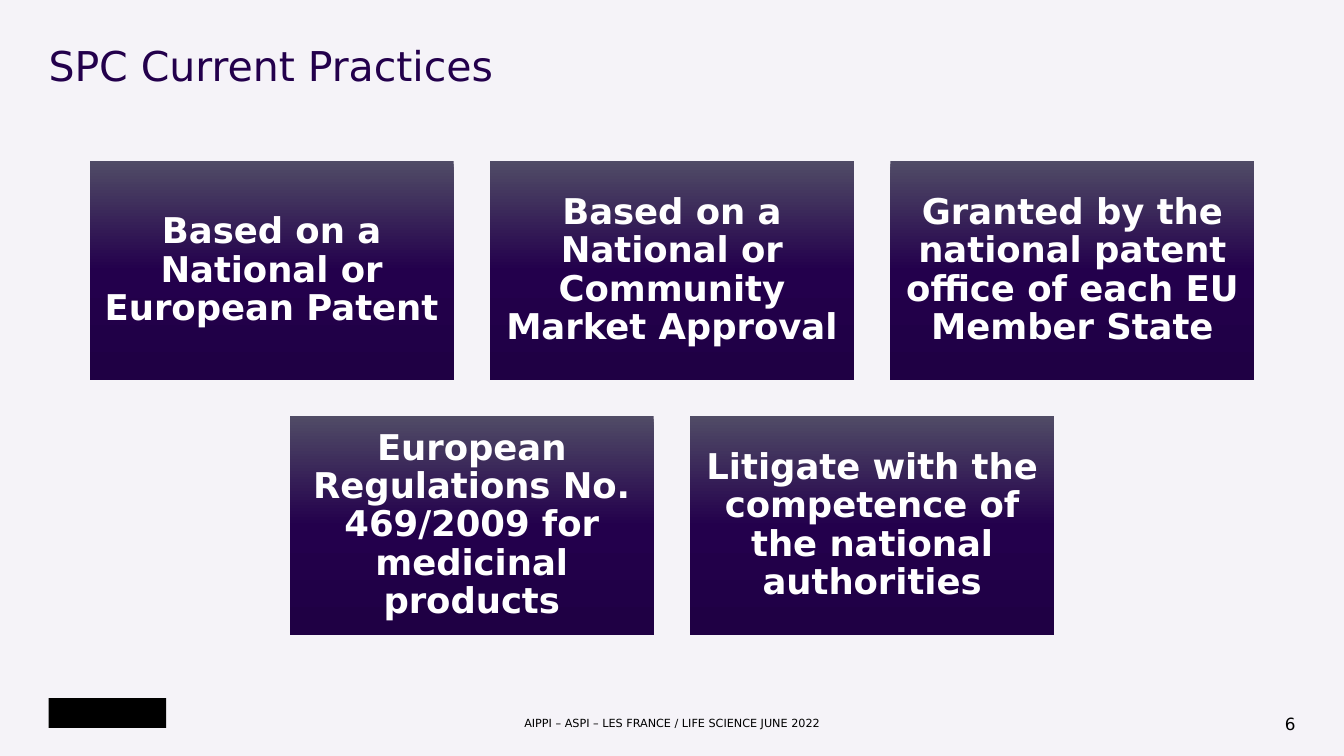
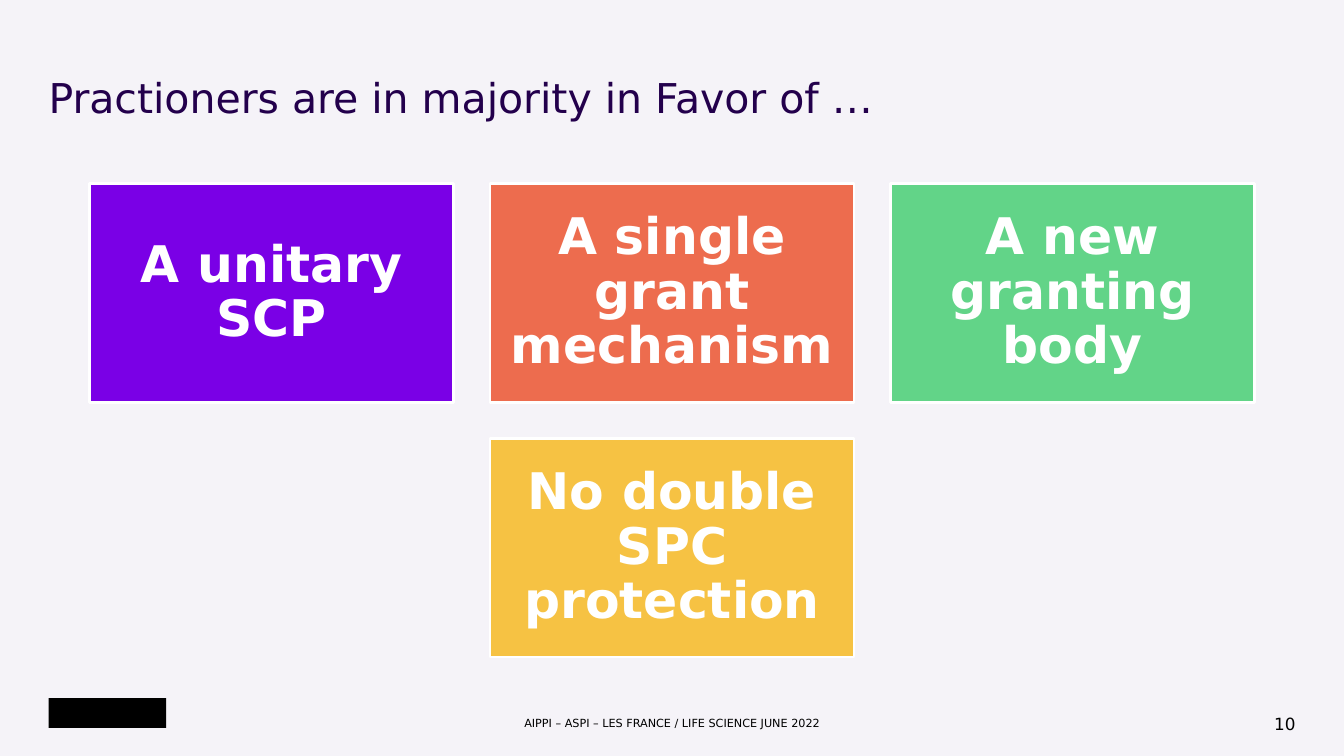
from copy import deepcopy

from pptx import Presentation
from pptx.dml.color import RGBColor
from pptx.enum.shapes import MSO_SHAPE
from pptx.enum.text import MSO_ANCHOR, MSO_AUTO_SIZE, PP_ALIGN
from pptx.util import Pt

RECT = MSO_SHAPE.RECTANGLE
TOP, MIDDLE = MSO_ANCHOR.TOP, MSO_ANCHOR.MIDDLE
LEFT, CENTER, RIGHT = PP_ALIGN.LEFT, PP_ALIGN.CENTER, PP_ALIGN.RIGHT
NO_AUTOFIT = MSO_AUTO_SIZE.NONE

PALE = RGBColor(0xF5, 0xF3, 0xF8)
BLACK = RGBColor(0x00, 0x00, 0x00)
WHITE = RGBColor(0xFF, 0xFF, 0xFF)
SLATE = RGBColor(0x50, 0x4B, 0x66)
INDIGO = RGBColor(0x23, 0x00, 0x4C)
NIGHT = RGBColor(0x1F, 0x00, 0x44)
VIOLET = RGBColor(0x7A, 0x00, 0xE6)
CORAL = RGBColor(0xED, 0x6C, 0x4E)
GREEN = RGBColor(0x62, 0xD4, 0x88)
YELLOW = RGBColor(0xF6, 0xC2, 0x43)

FONT = "DejaVu Sans"
FOOTER = "AIPPI – ASPI – LES FRANCE / LIFE SCIENCE JUNE 2022"
GRADIENT = [(0, SLATE), (0.5, INDIGO), (1, NIGHT)]

SLIDES = [
    {
        "title": "SPC Current Practices", "title_top": 24.5, "number": "6",
        "tiles_top": 86.5, "size": 19,
        "tiles": [
            ("Based on a National or European Patent", GRADIENT),
            ("Based on a National or Community Market Approval", GRADIENT),
            ("Granted by the national patent office of each EU Member State", GRADIENT),
            ("European Regulations No. 469/2009 for medicinal products", GRADIENT),
            ("Litigate with the competence of the national authorities", GRADIENT),
        ],
    },
    {
        "title": "Practioners are in majority in Favor of …", "title_top": 42, "number": "10",
        "tiles_top": 98.5, "size": 27,
        "tiles": [
            ("A unitary SCP", VIOLET),
            ("A single grant mechanism", CORAL),
            ("A new granting body", GREEN),
            ("No double SPC protection", YELLOW),
        ],
    },
]

SLIDE_W, SLIDE_H = 720, 405
MARGIN = 26
TILE_W, TILE_H, GAP = 195, 117, 19.5
COLUMNS = 3

TITLE_STYLE = {"size": Pt(22), "color": INDIGO}
FOOTER_STYLE = {"size": Pt(6), "color": BLACK}
NUMBER_STYLE = {"size": Pt(9), "color": BLACK}


def place(sp, *box):
    for name, value in zip(("left", "top", "width", "height"), box):
        setattr(sp, name, Pt(value))


def write(sp, text, style, align, anchor, inset=0, line_spacing=1.0):
    tf = sp.text_frame
    tf.text = text
    frame = {"word_wrap": True, "auto_size": NO_AUTOFIT, "vertical_anchor": anchor}
    for side in ("left", "top", "right", "bottom"):
        frame[f"margin_{side}"] = Pt(inset)
    for name, value in frame.items():
        setattr(tf, name, value)
    p = tf.paragraphs[0]
    p.alignment, p.line_spacing = align, line_spacing
    font = p.runs[0].font
    font.name = FONT
    for name, value in style.items():
        if name == "color":
            font.color.rgb = value
        else:
            setattr(font, name, value)


def add_label(s, box, text, style, align):
    sp = s.shapes.add_textbox(*map(Pt, box))
    write(sp, text, style, align, MIDDLE)


def add_rect(s, box, color):
    sp = s.shapes.add_shape(RECT, *map(Pt, box))
    sp.shadow.inherit = False
    if isinstance(color, list):
        fill_gradient(sp, color)
    else:
        sp.fill.solid()
        sp.fill.fore_color.rgb = color
    sp.line.fill.background()
    return sp


def fill_gradient(sp, stops):
    sp.fill.gradient()
    sp.fill.gradient_angle = 270
    stop_list = sp.fill._fill._gradFill.gsLst
    for _ in stops[2:]:
        stop_list.append(deepcopy(stop_list[0]))
    for stop, (position, color) in zip(sp.fill.gradient_stops, stops):
        stop.position = position
        stop.color.rgb = color


def add_tiles(s, tiles, top, size):
    style = {"size": Pt(size), "bold": True, "color": WHITE}
    for start in range(0, len(tiles), COLUMNS):
        row = tiles[start:start + COLUMNS]
        left = (SLIDE_W - len(row) * (TILE_W + GAP) + GAP) / 2
        for i, (text, color) in enumerate(row):
            sp = add_rect(s, (left + i * (TILE_W + GAP), top, TILE_W, TILE_H), color)
            if color is not GRADIENT:
                sp.line.color.rgb = WHITE
                sp.line.width = Pt(1.5)
            write(sp, text, style, CENTER, MIDDLE, size * 0.3, 0.9)
        top += TILE_H + GAP


def add_slide(prs, content):
    s = prs.slides.add_slide(prs.slide_layouts[5])
    add_rect(s, (MARGIN, 374, 63, 16), BLACK)
    add_label(s, (169, 382.5, 382, 10), FOOTER, FOOTER_STYLE, CENTER)
    add_label(s, (656.5, 379.5, 37.5, 16.5), content["number"], NUMBER_STYLE, RIGHT)
    title = s.shapes.title
    place(title, MARGIN, content["title_top"], SLIDE_W - 2 * MARGIN, 44)
    write(title, content["title"], TITLE_STYLE, LEFT, TOP, line_spacing=0.9)
    add_tiles(s, content["tiles"], content["tiles_top"], content["size"])


def main():
    prs = Presentation()
    prs.slide_width, prs.slide_height = Pt(SLIDE_W), Pt(SLIDE_H)
    background = prs.slide_master.background.fill
    background.solid()
    background.fore_color.rgb = PALE
    for content in SLIDES:
        add_slide(prs, content)
    prs.save("out.pptx")


if __name__ == "__main__":
    main()
